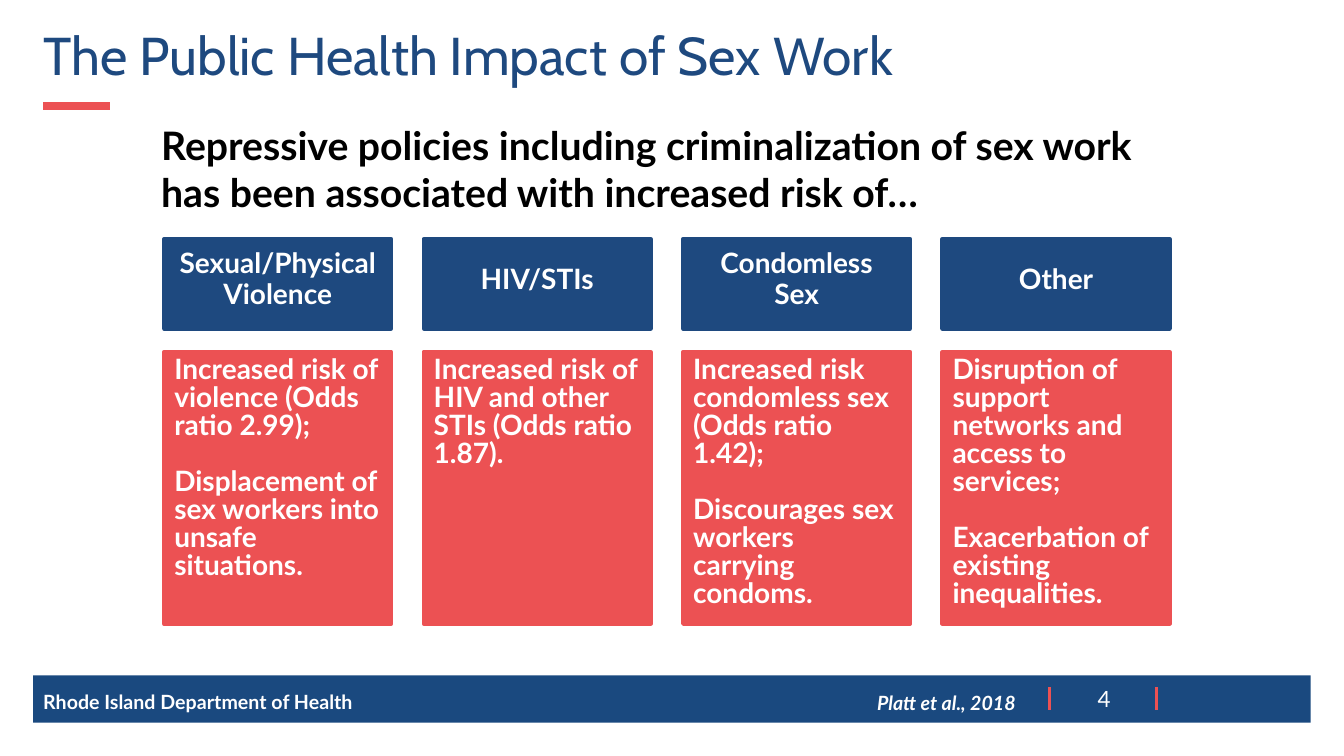
from lxml import etree
from pptx import Presentation
from pptx.dml.color import RGBColor
from pptx.enum import shapes, text
from pptx.oxml.ns import qn
from pptx.util import Inches, Pt

NAVY, BLUE, RED, WHITE, BLACK = "1E497F", "1A497F", "EC5153", "FFFFFF", "000000"
LEFT, CENTER = text.PP_ALIGN.LEFT, text.PP_ALIGN.CENTER
TOP, MIDDLE = text.MSO_ANCHOR.TOP, text.MSO_ANCHOR.MIDDLE

TITLE = "The Public Health Impact of Sex Work"
LEAD = ("Repressive policies including criminalization of sex work "
        "has been associated with increased risk of…")
RISKS = [
    (["Sexual/Physical", "Violence"],
     ["Increased risk of violence (Odds ratio 2.99);",
      "Displacement of sex workers into unsafe situations."]),
    (["HIV/STIs"],
     ["Increased risk of HIV and other STIs (Odds ratio 1.87)."]),
    (["Condomless", "Sex"],
     ["Increased risk condomless sex (Odds ratio 1.42);",
      "Discourages sex workers carrying condoms."]),
    (["Other"],
     ["Disruption of support networks and access to services;",
      "Exacerbation of existing inequalities."]),
]
AGENCY, CITATION, PAGE = "Rhode Island Department of Health", "Platt et al., 2018", "4"

CARD_LEFT, CARD_STEP, CARD_W = 1.63, 2.573, 2.25
HEAD_TOP, HEAD_H = 2.37, 0.89
BODY_TOP, BODY_H = 3.49, 2.7


def rgb(color):
    return RGBColor.from_string(color)


def write(sp, lines, size, color, font="Lato", bold=False, italic=False,
          align=LEFT, anchor=TOP, spacing=None, gap=0, wrap=True):
    """Fill a shape with paragraphs; gap is the space between them in points."""
    tf = sp.text_frame
    tf.word_wrap = wrap
    tf.vertical_anchor = anchor
    for i, line in enumerate(lines):
        p = tf.paragraphs[0] if i == 0 else tf.add_paragraph()
        p.text = line
        p.alignment = align
        p.line_spacing = spacing
        p.space_before = Pt(gap if i else 0)
        f = p.font
        f.name, f.size, f.bold, f.italic = font, Pt(size), bold, italic
        f.color.rgb = rgb(color)


def add_label(s, box, line, size, color, **style):
    sp = s.shapes.add_textbox(*map(Inches, box))
    write(sp, [line], size, color, **style)


def add_box(s, box, color, outline=0):
    sp = s.shapes.add_shape(shapes.MSO_SHAPE.RECTANGLE, *map(Inches, box))
    sp.shadow.inherit = False
    sp.fill.solid()
    sp.fill.fore_color.rgb = rgb(color)
    if outline:
        sp.line.color.rgb = rgb(color)
        sp.line.width = Pt(outline)
    else:
        sp.line.fill.background()
    return sp


def add_line(s, x1, y1, x2, y2, width):
    line = s.shapes.add_connector(
        shapes.MSO_CONNECTOR.STRAIGHT, *map(Inches, (x1, y1, x2, y2)))
    line.line.color.rgb = rgb(RED)
    line.line.width = Pt(width)
    etree.SubElement(line._element.spPr, qn("a:effectLst"))


def main():
    prs = Presentation()
    prs.slide_width, prs.slide_height = Inches(13.33), Inches(7.5)
    s = prs.slides.add_slide(prs.slide_layouts[5])

    title = s.shapes.title
    title.left, title.top, title.width, title.height = map(Inches, (0.33, 0.19, 13, 0.77))
    write(title, [TITLE], 38, NAVY, font="Cabin", anchor=MIDDLE, spacing=0.9)
    add_line(s, 0.43, 1.05, 1.09, 1.05, 6)

    add_label(s, (1.5, 1.15, 10.11, 1.04), LEAD, 28, BLACK, bold=True)

    for i, (heading, effects) in enumerate(RISKS):
        x = CARD_LEFT + i * CARD_STEP
        head = add_box(s, (x, HEAD_TOP, CARD_W, HEAD_H), NAVY, 3)
        write(head, heading, 20, WHITE, bold=True, align=CENTER,
              anchor=MIDDLE, spacing=Pt(16), gap=6, wrap=False)
        body = add_box(s, (x, BODY_TOP, CARD_W, BODY_H), RED, 3)
        write(body, effects, 20, WHITE, bold=True, spacing=Pt(20), gap=20)

    add_box(s, (0.33, 6.7, 12.67, 0.47), BLUE)
    for x in (10.41, 11.47):
        add_line(s, x, 6.82, x, 7.04, 2.25)
    add_label(s, (0.33, 6.8, 7.82, 0.26), AGENCY, 14, WHITE,
              bold=True, anchor=MIDDLE, spacing=1.23)
    add_label(s, (8.6, 6.75, 1.59, 0.36), CITATION, 14, WHITE,
              bold=True, italic=True, spacing=1.23, wrap=False)
    add_label(s, (10.63, 6.75, 0.64, 0.37), PAGE, 16, WHITE,
              align=CENTER, anchor=MIDDLE)

    prs.save("out.pptx")


if __name__ == "__main__":
    main()
